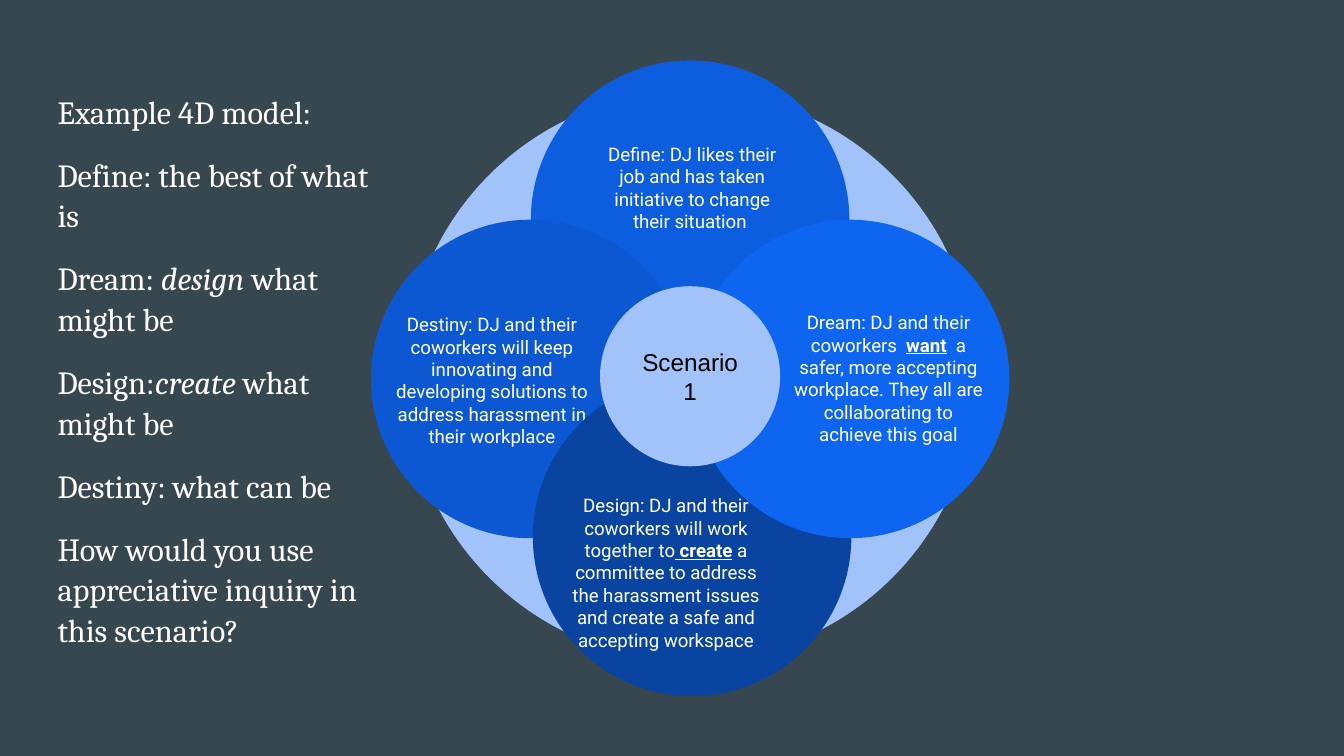
"""Build a 4D appreciative inquiry slide with overlapping circles."""
from pptx import Presentation, util as u
from pptx.dml.color import RGBColor
from pptx.enum import shapes, text

presentation = Presentation()
presentation.slide_width = u.Inches(10)
presentation.slide_height = presentation.slide_width * 9 // 16
GRID = presentation.slide_width / 100
slide = presentation.slides.add_slide(presentation.slide_layouts[6])
slide.background.fill.solid()
slide.background.fill.fore_color.rgb = RGBColor.from_string("37474F")


def add_circle(left, top, size, color):
    box = [round(value * GRID) for value in (left, top, size, size)]
    circle = slide.shapes.add_shape(shapes.MSO_SHAPE.OVAL, *box)
    circle.shadow.inherit = False
    circle.fill.solid()
    circle.fill.fore_color.rgb = RGBColor.from_string(color)
    circle.line.fill.background()
    return circle


def write(shape, paragraphs, font, size, color, centered=True):
    frame = shape.text_frame
    frame.word_wrap = True
    frame.margin_left = frame.margin_right = round(GRID)
    frame.margin_top = frame.margin_bottom = round(GRID)
    frame.vertical_anchor = text.MSO_ANCHOR.MIDDLE if centered else text.MSO_ANCHOR.TOP
    for index, pieces in enumerate(paragraphs):
        paragraph = frame.add_paragraph() if index else frame.paragraphs[0]
        paragraph.alignment = text.PP_ALIGN.CENTER if centered else text.PP_ALIGN.LEFT
        if not centered:
            paragraph.line_spacing = 1.05
            if index:
                paragraph.space_before = u.Pt(12)
        paragraph.font.name, paragraph.font.size = font, u.Pt(size)
        paragraph.font.color.rgb = RGBColor.from_string(color)
        for position, piece in enumerate(pieces):
            run = paragraph.add_run()
            run.text = piece
            if position == 1 and centered:
                run.font.bold = run.font.underline = True
            elif position == 1:
                run.font.italic = True


outline = [
    ["Example 4D model:"],
    ["Define: the best of what is"],
    ["Dream: ", "design", " what might be"],
    ["Design:", "create ", "what might be"],
    ["Destiny: what can be"],
    ["How would you use appreciative inquiry in this scenario?"],
]
outline_place = [round(value * GRID) for value in (3.3, 5.7, 25.4, 44.6)]
outline_box = slide.shapes.add_textbox(*outline_place)
write(outline_box, outline, "Cambria", 17.3, "FFFFFF", centered=False)
outline_box.text_frame.paragraphs[-1].space_after = u.Pt(12)

add_circle(30.2, 6.8, 42.4, "A1C3FA")
stages = [
    (39.5, 4.5, "0D5DDF", 43.3, 10.1,
     ["Define: DJ likes their job and has taken initiative to change their situation "]),
    (27.6, 16.35, "0C58D3", 28.4, 24.45,
     ["Destiny: DJ and their coworkers will keep innovating and developing solutions "
      "to address harassment in their workplace"]),
    (39.65, 28.1, "0944A1", 41.35, 38.75,
     ["Design: DJ and their coworkers will work together to", " create",
      " a committee to address the harassment issues and create a safe and accepting workspace"]),
    (51.4, 16.35, "0E65F0", 57.9, 24.3,
     ["Dream: DJ and their coworkers  ", "want",
      "  a safer, more accepting workplace. They all are collaborating to achieve this goal"]),
]
for left, top, color, label_left, label_top, pieces in stages:
    add_circle(left, top, 23.7, color)
    label_place = [round(value * GRID) for value in (label_left, label_top, 16.4, 7.7)]
    label = slide.shapes.add_textbox(*label_place)
    write(label, [pieces], "Roboto", 10, "FFFFFF")

center = add_circle(44.65, 21.3, 13.4, "A1C3FA")
write(center, [["Scenario 1"]], "Arial", 13, "000000")

presentation.save("out.pptx")
